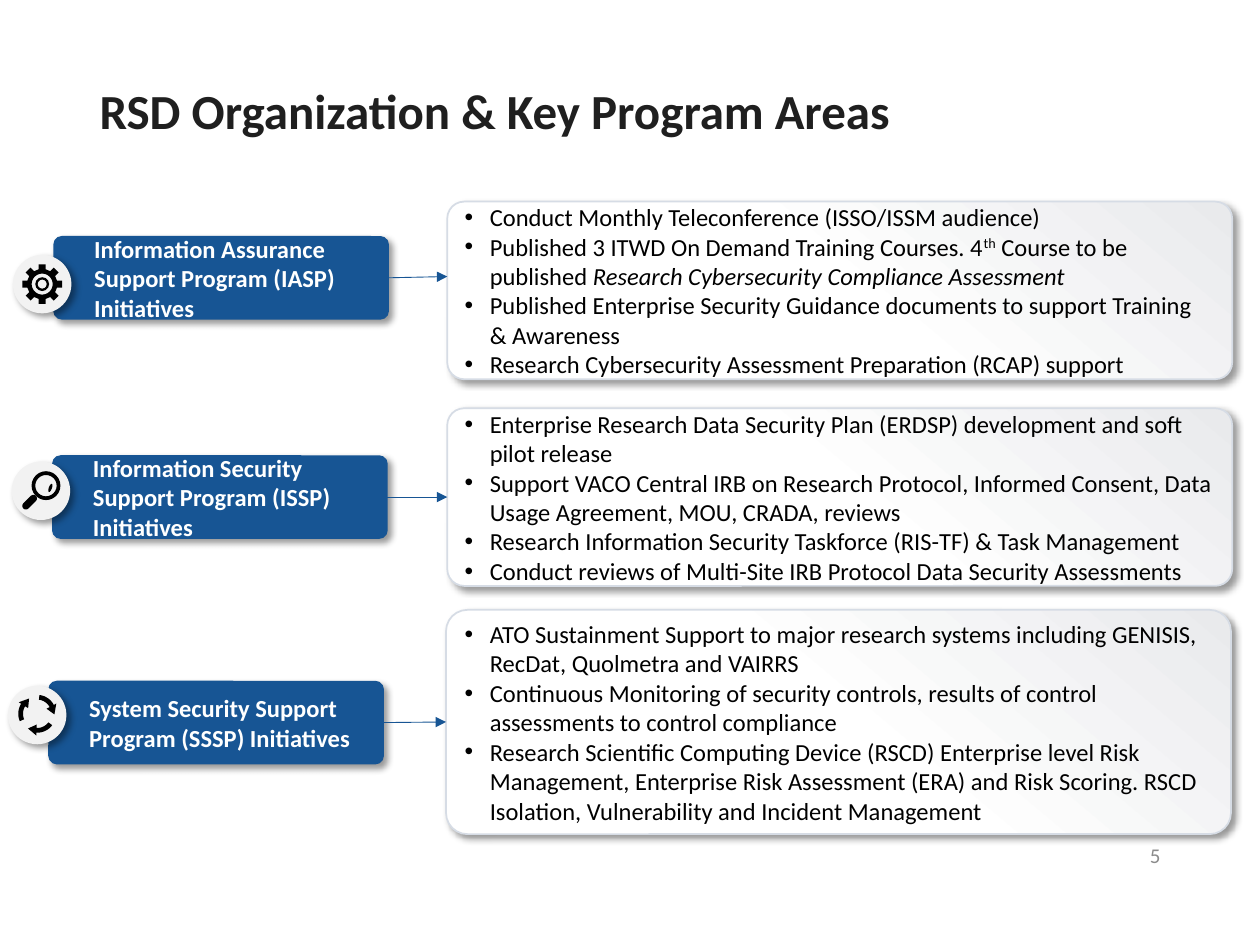
from math import cos, radians, sin

from lxml import etree
from pptx import Presentation
from pptx.dml.color import RGBColor
from pptx.enum.shapes import MSO_CONNECTOR, MSO_SHAPE
from pptx.enum.text import MSO_ANCHOR, MSO_AUTO_SIZE, PP_ALIGN
from pptx.oxml.ns import qn
from pptx.util import Pt

STRAIGHT = MSO_CONNECTOR.STRAIGHT
ROUNDED, OVAL, DONUT = MSO_SHAPE.ROUNDED_RECTANGLE, MSO_SHAPE.OVAL, MSO_SHAPE.DONUT
MIDDLE, BOTTOM = MSO_ANCHOR.MIDDLE, MSO_ANCHOR.BOTTOM
LEFT, RIGHT = PP_ALIGN.LEFT, PP_ALIGN.RIGHT
LABEL_SIDE, CARD_SIDE = 3, 1

COLORS = {
    "title": "1F1F1F", "blue": "175594", "badge": "F2F2F2", "white": "FFFFFF",
    "black": "000000", "card_end": "E9EAEC", "card_line": "D6DCE5", "number": "8C8C8C",
}
LABEL_W, LABEL_H, CARD_W, BADGE = 190.8, 46.8, 448.56, 32.4


def rgb(name):
    return RGBColor.from_string(COLORS[name])


def add_run(p, text, size, color, **formats):
    r = p.add_run()
    r.text = text
    for name, value in {"name": "Calibri", "size": Pt(size), **formats}.items():
        setattr(r.font, name, value)
    r.font.color.rgb = rgb(color)
    return r


def set_frame(tf, anchor, **margins):
    formats = {"word_wrap": True, "auto_size": MSO_AUTO_SIZE.NONE, "vertical_anchor": anchor}
    for name, value in {**formats, **margins}.items():
        setattr(tf, name, value)


def set_indent(p, left, first=0, bullet=None):
    pPr = p._p.get_or_add_pPr()
    pPr.set("marL", str(Pt(left)))
    pPr.set("indent", str(Pt(first)))
    if bullet:
        etree.SubElement(pPr, qn("a:buFont")).set("typeface", "Arial")
        etree.SubElement(pPr, qn("a:buChar")).set("char", bullet)


def add_shadow(sp):
    sp.shadow.inherit = False
    effects = sp._element.spPr.find(qn("a:effectLst"))
    shadow = etree.SubElement(effects, qn("a:outerShdw"), blurRad=str(Pt(4)),
                              dist=str(Pt(3)), dir="2700000", algn="tl", rotWithShape="0")
    color = etree.SubElement(shadow, qn("a:srgbClr"), val=COLORS["black"])
    etree.SubElement(color, qn("a:alpha"), val="40000")


def add_box(s, kind, box, fill, line):
    sp = s.shapes.add_shape(kind, *map(Pt, box))
    if kind == ROUNDED:
        sp.adjustments[0] = 0.095
    if fill:
        sp.fill.solid()
        sp.fill.fore_color.rgb = rgb(fill)
    sp.line.color.rgb = rgb(line)
    sp.line.width = Pt(1)
    add_shadow(sp)
    return sp


def fill_black(sp):
    sp.shadow.inherit = False
    sp.fill.solid()
    sp.fill.fore_color.rgb = rgb("black")
    sp.line.fill.background()


def add_outline(s, cx, cy, *contours):
    builder = None
    for contour in contours:
        points = [(Pt(cx + radius * cos(radians(a))), Pt(cy + radius * sin(radians(a))))
                  for radius, a in contour]
        if builder is None:
            builder = s.shapes.build_freeform(*points[0], scale=1.0)
        else:
            builder.move_to(*points[0])
        builder.add_line_segments(points[1:], close=True)
    fill_black(builder.convert_to_shape())


def add_part(s, kind, cx, cy, w, h, adjust=None, rotation=0):
    sp = s.shapes.add_shape(kind, Pt(cx - w / 2), Pt(cy - h / 2), Pt(w), Pt(h))
    if adjust is not None:
        sp.adjustments[0] = adjust
    sp.rotation = rotation
    fill_black(sp)


def draw_gear(s, cx, cy):
    tooth = [(8.7, -13), (11.5, -10), (11.5, 10), (8.7, 13)]
    teeth = [(radius, turn + a) for turn in range(0, 360, 45) for radius, a in tooth]
    hole = [(6, a) for a in range(360, 0, -10)]
    add_outline(s, cx, cy, teeth, hole)
    add_part(s, DONUT, cx, cy, 7.92, 7.92, 0.17)


def draw_magnifier(s, cx, cy):
    add_part(s, DONUT, cx + 2.9, cy - 2.9, 16.5, 16.5, 0.13)
    add_part(s, ROUNDED, cx - 6.5, cy + 6.5, 10.2, 4.2, 0.5, 135)
    add_part(s, OVAL, cx + 5.4, cy - 1.6, 1.8, 5, rotation=20)


def draw_cycle(s, cx, cy):
    for start in (37, 157, 277):
        bend = range(start, start + 56, 5)
        arrow = [(10.8, a) for a in bend]
        arrow += [(12.4, start + 55), (9.9, start + 85), (6.1, start + 55)]
        arrow += [(8.1, a) for a in reversed(bend)]
        add_outline(s, cx, cy - 0.7, arrow)


def add_label(s, x, y, text, draw_icon, badge_y):
    sp = add_box(s, ROUNDED, (x, y, LABEL_W, LABEL_H), "blue", "blue")
    set_frame(sp.text_frame, MIDDLE, margin_left=0, margin_right=0)
    p = sp.text_frame.paragraphs[0]
    p.alignment = LEFT
    set_indent(p, 21.6)
    add_run(p, text, 14, "white", bold=True)
    badge_x = x - 23.04
    add_box(s, OVAL, (badge_x, badge_y, BADGE, BADGE), "badge", "badge")
    draw_icon(s, badge_x + BADGE / 2, badge_y + BADGE / 2)
    return sp


def add_card(s, x, y, h, items):
    sp = add_box(s, ROUNDED, (x, y, CARD_W, h), None, "card_line")
    sp.fill.gradient()
    sp.fill.gradient_angle = 50
    for stop, position, color in zip(sp.fill.gradient_stops, (0.5, 1), ("white", "card_end")):
        stop.position = position
        stop.color.rgb = rgb(color)
    tf = sp.text_frame
    set_frame(tf, MIDDLE)
    for i, runs in enumerate(items):
        p = tf.add_paragraph() if i else tf.paragraphs[0]
        p.alignment = LEFT
        set_indent(p, 14.4, -14.4, "•")
        for text, style in runs:
            r = add_run(p, text, 14, "black", italic=style == "italic")
            if style == "super":
                r._r.get_or_add_rPr().set("baseline", "30000")
    return sp


def add_arrow(s, label, card, joined):
    y = label.top + label.height // 2
    line = s.shapes.add_connector(STRAIGHT, label.left + label.width, y, card.left, y - Pt(0.72))
    line.begin_connect(label, LABEL_SIDE)
    if joined:
        line.end_connect(card, CARD_SIDE)
    line.line.color.rgb = rgb("blue")
    line.line.width = Pt(0.5)
    etree.SubElement(line.line._get_or_add_ln(), qn("a:tailEnd"), type="triangle")
    etree.SubElement(line._element.spPr, qn("a:effectLst"))


def add_title(s, box, text):
    sp = s.shapes.title
    sp.left, sp.top, sp.width, sp.height = map(Pt, box)
    set_frame(sp.text_frame, BOTTOM)
    p = sp.text_frame.paragraphs[0]
    p.alignment, p.line_spacing = LEFT, 0.9
    add_run(p, text, 28, "title", bold=True)


def add_number(s, box, text):
    tf = s.shapes.add_textbox(*map(Pt, box)).text_frame
    set_frame(tf, MIDDLE)
    tf.paragraphs[0].alignment = RIGHT
    add_run(tf.paragraphs[0], text, 12, "number")


def plain(*texts):
    return [[(text, None)] for text in texts]


ROWS = [
    ((30.96, 135.36), "Information Assurance Support Program (IASP) Initiatives", draw_gear, 146.16,
     (255.6, 115.2, 101.52), False,
     plain("Conduct Monthly Teleconference (ISSO/ISSM audience)")
     + [[("Published 3 ITWD On Demand Training Courses. 4", None), ("th", "super"),
         (" Course to be published ", None),
         ("Research Cybersecurity Compliance Assessment", "italic")]]
     + plain("Published Enterprise Security Guidance documents to support Training & Awareness",
             "Research Cybersecurity Assessment Preparation (RCAP) support")),
    ((30.24, 260.64), "Information Security Support Program (ISSP) Initiatives", draw_magnifier, 264.24,
     (255.6, 233.28, 101.52), True,
     plain("Enterprise Research Data Security Plan (ERDSP) development and soft pilot release",
           "Support VACO Central IRB on Research Protocol, Informed Consent, Data Usage Agreement, "
           "MOU, CRADA, reviews",
           "Research Information Security Taskforce (RIS-TF) & Task Management",
           "Conduct reviews of Multi-Site IRB Protocol Data Security Assessments")),
    ((28.08, 389.52), "System Security Support Program (SSSP) Initiatives", draw_cycle, 392.4,
     (254.88, 348.48, 128.16), True,
     plain("ATO Sustainment Support to major research systems including GENISIS, RecDat, "
           "Quolmetra and VAIRRS",
           "Continuous Monitoring of security controls, results of control assessments to control "
           "compliance",
           "Research Scientific Computing Device (RSCD) Enterprise level Risk Management, Enterprise "
           "Risk Assessment (ERA) and Risk Scoring. RSCD Isolation, Vulnerability and Incident "
           "Management")),
]


def main():
    prs = Presentation()
    prs.slide_width, prs.slide_height = Pt(720), Pt(540)
    s = prs.slides.add_slide(prs.slide_layouts[5])
    add_title(s, (49.68, 29.52, 621.36, 54), "RSD Organization & Key Program Areas")
    for place, text, draw_icon, badge_y, card_box, joined, items in ROWS:
        label = add_label(s, *place, text, draw_icon, badge_y)
        card = add_card(s, *card_box, items)
        add_arrow(s, label, card, joined)
    add_number(s, (508.32, 474.48, 162, 28.8), "5")
    prs.save("out.pptx")


if __name__ == "__main__":
    main()
